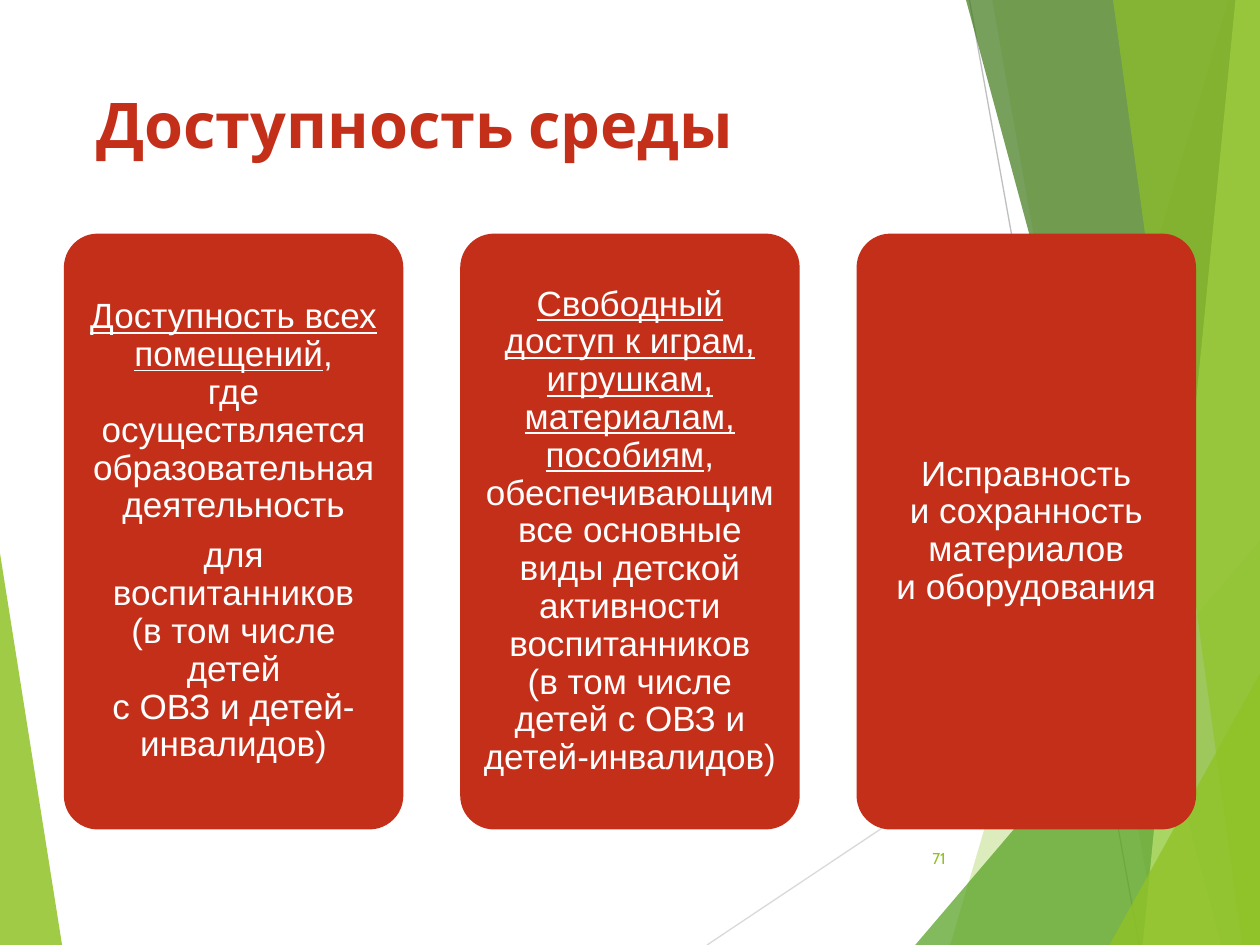
from dataclasses import dataclass

from lxml import etree
from pptx import Presentation
from pptx.dml.color import RGBColor
from pptx.enum import shapes, text
from pptx.oxml.ns import qn
from pptx.util import Pt

WIDE, HIGH = 720, 540


@dataclass(frozen=True)
class Theme:
    red: str = "C42F1A"
    white: str = "FFFFFF"
    lime: str = "90C226"
    green: str = "54A021"
    dark: str = "3F7819"
    pale: str = "C0E474"
    gray: str = "BFBFBF"
    light: str = "D9D9D9"
    head: str = "Cabin"
    body: str = "Arial"
    title: int = 36
    main: int = 20
    small: int = 9


def write(frame, paras, *, font, size, color, bold=False, align="LEFT",
          lead=1.0, after=0, inset=None):
    """Fill a frame; each paragraph is a list of (words, underlined) pairs."""
    frame.word_wrap = True
    frame.vertical_anchor = text.MSO_ANCHOR.MIDDLE
    if inset is not None:
        frame.margin_left = frame.margin_right = Pt(inset)
        frame.margin_top = frame.margin_bottom = Pt(inset)
    for num, parts in enumerate(paras):
        para = frame.add_paragraph() if num else frame.paragraphs[0]
        para.alignment = text.PP_ALIGN[align]
        para.line_spacing = lead
        para.space_after = Pt(after)
        for words, under in parts:
            for row, line in enumerate(words.split("\n")):
                if row:
                    para.add_line_break()
                run = para.add_run()
                run.text = line
                run.font.name = font
                run.font.size = Pt(size)
                run.font.bold = bold
                run.font.underline = under
                run.font.color.rgb = RGBColor.from_string(color)


class Deck:
    def __init__(self, theme):
        self.theme = theme
        self.prs = Presentation()
        self.prs.slide_width, self.prs.slide_height = Pt(WIDE), Pt(HIGH)
        self.slide = self.prs.slides.add_slide(self.prs.slide_layouts[6])

    def paint(self, shape, color, alpha=100):
        shape.shadow.inherit = False
        shape.line.fill.background()
        shape.fill.solid()
        shape.fill.fore_color.rgb = RGBColor.from_string(color)
        if alpha < 100:
            tint = shape.fill._xPr.find(".//" + qn("a:srgbClr"))
            etree.SubElement(tint, qn("a:alpha")).set("val", str(alpha * 1000))

    def facet(self, points, color, alpha):
        first, *rest = [(Pt(x), Pt(y)) for x, y in points]
        pen = self.slide.shapes.build_freeform(*first)
        pen.add_line_segments(rest, close=True)
        self.paint(pen.convert_to_shape(), color, alpha)

    def line(self, start, end, color):
        line = self.slide.shapes.add_connector(
            shapes.MSO_CONNECTOR.STRAIGHT, *map(Pt, start + end))
        line.line.width = Pt(0.75)
        line.line.color.rgb = RGBColor.from_string(color)
        etree.SubElement(line._element.spPr, qn("a:effectLst"))

    def label(self, box, words, **style):
        frame = self.slide.shapes.add_textbox(*map(Pt, box)).text_frame
        write(frame, [[(words, False)]], **style)

    def card(self, box, paras):
        card = self.slide.shapes.add_shape(
            shapes.MSO_SHAPE.ROUNDED_RECTANGLE, *map(Pt, box))
        card.adjustments[0] = 0.1
        self.paint(card, self.theme.red)
        write(card.text_frame, paras, font=self.theme.body,
              size=self.theme.main, color=self.theme.white,
              align="CENTER", lead=0.9, after=7, inset=6)


CARDS = [
    [[("Доступность всех помещений", True),
      (",\nгде осуществляется образовательная деятельность", False)],
     [("для воспитанников\n(в том числе детей\n"
       "с ОВЗ и детей-инвалидов)", False)]],
    [[("Свободный", True), (" ", False),
      ("доступ к играм, игрушкам, материалам, пособиям", True),
      (", обеспечивающим все основные виды детской активности воспитанников\n"
       "(в том числе детей с ОВЗ и детей-инвалидов)", False)]],
    [[("Исправность\nи сохранность материалов\nи оборудования", False)]],
]


def main():
    look = Theme()
    deck = Deck(look)

    deck.facet([(0, 316), (35.5, HIGH), (0, HIGH)], look.lime, 85)
    deck.line((404, HIGH), (WIDE, 329), look.light)
    deck.line((554, 0), (651, HIGH), look.gray)

    # Each facet runs from its slanted left edge to the right side of the slide
    facets = [
        ((702, 0), 543, look.lime, 30),
        ((567, 0), 662, look.lime, 20),
        ((WIDE, 309), 523, look.green, 72),
        ((552, 0), 698, look.dark, 70),
        ((706, 0), 653, look.pale, 70),
        ((636, 0), 710, look.lime, 65),
        ((WIDE, 385), 634, look.lime, 80),
    ]
    for peak, foot, color, alpha in facets:
        edge = [(foot, HIGH), (WIDE, HIGH), (WIDE, peak[1])]
        deck.facet([peak] + edge, color, alpha)

    deck.label((48, 15, 500, 117), "Доступность среды", font=look.head,
               size=look.title, color=look.red, bold=True, lead=0.9)
    for num, paras in enumerate(CARDS):
        deck.card((36.5 + num * 226.5, 133.5, 194, 340.5), paras)
    deck.label((507.5, 476, 40, 29), "71", font=look.head,
               size=look.small, color=look.lime, align="RIGHT")

    deck.prs.save("out.pptx")


if __name__ == "__main__":
    main()
